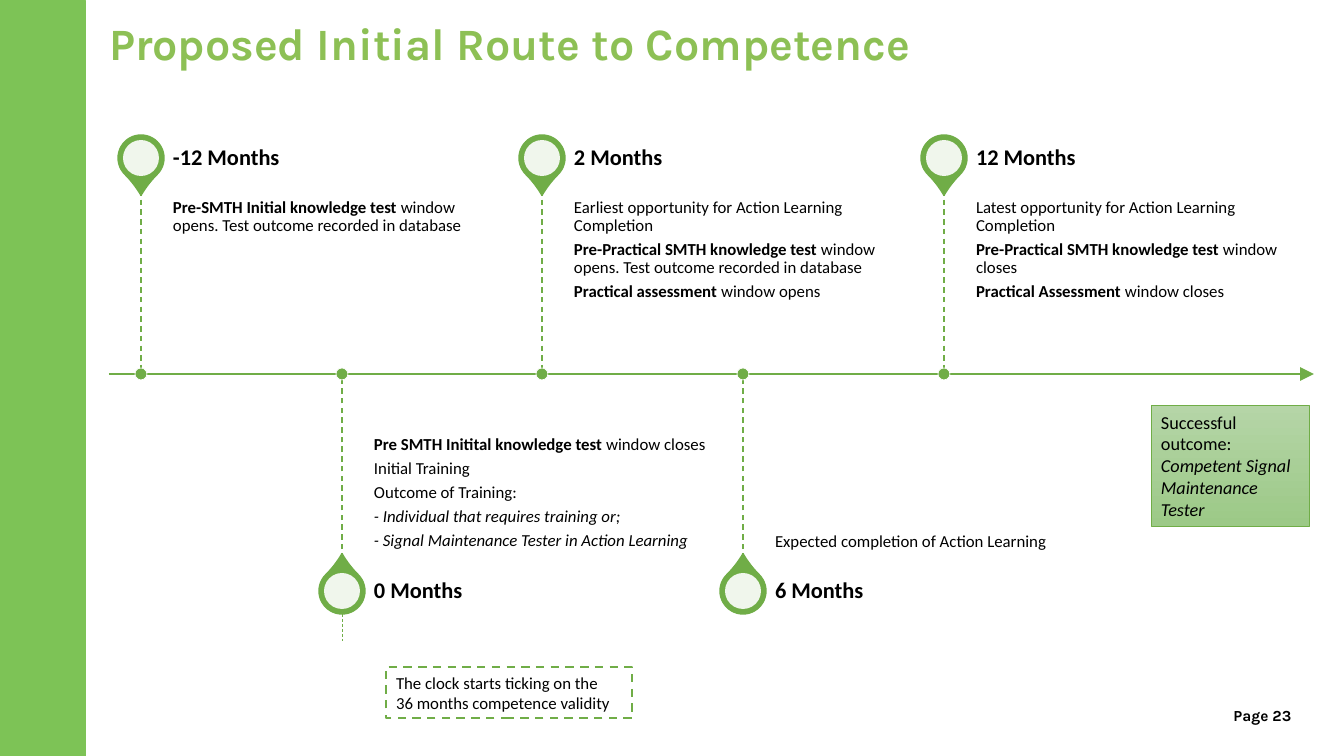
from lxml.etree import SubElement
from pptx import Presentation
from pptx.dml.color import RGBColor
from pptx.enum.dml import MSO_LINE
from pptx.enum.shapes import MSO_CONNECTOR, MSO_SHAPE
from pptx.enum.text import MSO_ANCHOR, PP_ALIGN
from pptx.oxml.ns import qn
from pptx.util import Emu, Pt

WIDTH, HEIGHT = 1344, 756
EMU_PER_PX = 12192000 / WIDTH
GREEN = RGBColor(0x70, 0xAD, 0x47)
BAR_GREEN = RGBColor(0x7D, 0xC3, 0x56)
TITLE_GREEN = RGBColor(0x8D, 0xC0, 0x55)
OUTCOME_TOP = RGBColor(0xB5, 0xD5, 0xA7)
OUTCOME_BOTTOM = RGBColor(0x9C, 0xC9, 0x87)
BLACK = RGBColor(0, 0, 0)
WHITE = RGBColor(255, 255, 255)

AXIS_Y = 374
FIRST_X, STEP = 141, 200.75
PIN, PIN_HOLE, DOT = 46, 36, 12
TEXT_WIDTH, BODY_HEIGHT, HEADING_HEIGHT = 335, 184, 64
PLAIN, BOLD, ITALIC = "plain", "bold", "italic"

# Milestones alternate above and below the axis; each body paragraph is a list of (text, style).
MILESTONES = [
    ("-12 Months", [
        [("Pre-SMTH Initial knowledge test ", BOLD),
         ("window opens. Test outcome recorded in database", PLAIN)]]),
    ("0 Months", [
        [("Pre SMTH Initital knowledge test ", BOLD), ("window closes", PLAIN)],
        [("Initial Training", PLAIN)],
        [("Outcome of Training:", PLAIN)],
        [("- Individual that requires training or;", ITALIC)],
        [("- Signal Maintenance Tester in Action Learning", ITALIC)]]),
    ("2 Months", [
        [("Earliest opportunity for Action Learning Completion", PLAIN)],
        [("Pre-Practical SMTH knowledge test ", BOLD),
         ("window opens. Test outcome recorded in database", PLAIN)],
        [("Practical assessment ", BOLD), ("window opens", PLAIN)]]),
    ("6 Months", [
        [("Expected completion of Action Learning", PLAIN)]]),
    ("12 Months", [
        [("Latest opportunity for Action Learning Completion", PLAIN)],
        [("Pre-Practical SMTH knowledge test ", BOLD), ("window closes", PLAIN)],
        [("Practical Assessment ", BOLD), ("window closes", PLAIN)]]),
]


def px(*lengths):
    return [Emu(round(length * EMU_PER_PX)) for length in lengths]


def write(shape, paragraphs, size, margins=(10, 5, 10, 5), anchor=MSO_ANCHOR.MIDDLE,
          font="Calibri", color=BLACK, align=PP_ALIGN.LEFT, line_spacing=1.0, gap=0):
    """Fill a shape with paragraphs of (text, style) runs; margins are left, top, right, bottom."""
    frame = shape.text_frame
    frame.word_wrap = True
    frame.vertical_anchor = anchor
    (frame.margin_left, frame.margin_top,
     frame.margin_right, frame.margin_bottom) = px(*margins)
    for number, runs in enumerate(paragraphs):
        paragraph = frame.paragraphs[0] if number == 0 else frame.add_paragraph()
        paragraph.alignment = align
        paragraph.line_spacing = line_spacing
        paragraph.space_before = Pt(0)
        paragraph.space_after = Pt(gap)
        for text, style in runs:
            run = paragraph.add_run()
            run.text = text
            run.font.name = font
            run.font.size = Pt(size)
            run.font.color.rgb = color
            run.font.bold = style == BOLD
            run.font.italic = style == ITALIC


presentation = Presentation()
presentation.slide_width, presentation.slide_height = px(WIDTH, HEIGHT)
slide = presentation.slides.add_slide(presentation.slide_layouts[5])
shapes = slide.shapes

side_bar = shapes.add_shape(MSO_SHAPE.RECTANGLE, *px(-1, 0, 86, HEIGHT))
side_bar.fill.solid()
side_bar.fill.fore_color.rgb = BAR_GREEN
side_bar.line.color.rgb = BAR_GREEN
side_bar.line.width = Pt(0.5)

page_number = shapes.add_textbox(*px(1181, 706, 163, 19))
write(page_number, [[("Page 23", BOLD)]], 11, margins=(0, 0, 0, 0),
      anchor=MSO_ANCHOR.TOP, font="Karla", align=PP_ALIGN.CENTER)

title = shapes.title
title.left, title.top, title.width, title.height = px(109, 0, 1190, 92)
write(title, [[("Proposed Initial Route to Competence", BOLD)]], 32,
      margins=(0, 5, 0, 5), font="Karla", color=TITLE_GREEN, line_spacing=0.9)

axis = shapes.add_connector(MSO_CONNECTOR.STRAIGHT, *px(109, AXIS_Y, 1314, AXIS_Y))
axis.line.color.rgb = GREEN
axis.line.width = Pt(1.5)
SubElement(axis.line._get_or_add_ln(), qn("a:tailEnd"), type="triangle", w="lg", len="lg")

for index, (heading, body) in enumerate(MILESTONES):
    x = round(FIRST_X + index * STEP)
    text_left = x + 32
    if index % 2 == 0:
        pin_y, rotation, stem_end = 158, 135, 190
        heading_top, body_top = 126, 191
        body_margins, body_anchor = (0, 8, 8, 12), MSO_ANCHOR.TOP
    else:
        pin_y, rotation, stem_end = 591, 315, 559
        heading_top, body_top = 559, AXIS_Y
        body_margins, body_anchor = (0, 12, 0, 8), MSO_ANCHOR.BOTTOM

    pin = shapes.add_shape(MSO_SHAPE.TEAR, *px(x - PIN / 2, pin_y - PIN / 2, PIN, PIN))
    pin.adjustments[0] = 1.15
    pin.rotation = rotation
    pin.fill.solid()
    pin.fill.fore_color.rgb = GREEN
    pin.line.color.rgb = GREEN
    pin.line.width = Pt(1)

    hole = shapes.add_shape(
        MSO_SHAPE.OVAL, *px(x - PIN_HOLE / 2, pin_y - PIN_HOLE / 2, PIN_HOLE, PIN_HOLE))
    hole.fill.solid()
    hole.fill.fore_color.rgb = WHITE
    hole_color = hole.element.spPr.find(qn("a:solidFill"))[0]
    SubElement(hole_color, qn("a:alpha"), val="90000")
    hole.line.fill.background()

    body_box = shapes.add_textbox(*px(text_left, body_top, TEXT_WIDTH, BODY_HEIGHT))
    write(body_box, body, 12, body_margins, body_anchor, line_spacing=0.9, gap=4.2)
    heading_box = shapes.add_textbox(*px(text_left, heading_top, TEXT_WIDTH, HEADING_HEIGHT))
    write(heading_box, [[(heading, BOLD)]], 16, (0, 0, 11, 0), line_spacing=0.9)

    stem = shapes.add_connector(MSO_CONNECTOR.STRAIGHT, *px(x, stem_end, x, AXIS_Y))
    stem.line.color.rgb = GREEN
    stem.line.width = Pt(1)
    stem.line.dash_style = MSO_LINE.DASH

    dot = shapes.add_shape(MSO_SHAPE.OVAL, *px(x - DOT / 2, AXIS_Y - DOT / 2, DOT, DOT))
    dot.fill.solid()
    dot.fill.fore_color.rgb = GREEN
    dot.line.color.rgb = WHITE
    dot.line.width = Pt(0.5)

outcome = shapes.add_shape(MSO_SHAPE.RECTANGLE, *px(1151, 405, 158, 121))
outcome.fill.gradient()
outcome.fill.gradient_angle = 270
for stop, color in zip(outcome.fill.gradient_stops, (OUTCOME_TOP, OUTCOME_BOTTOM)):
    stop.color.rgb = color
outcome.line.color.rgb = GREEN
outcome.line.width = Pt(0.5)
write(outcome, [[("Successful outcome: ", PLAIN),
                 ("Competent Signal Maintenance Tester", ITALIC)]], 13)

clock_note = shapes.add_shape(MSO_SHAPE.RECTANGLE, *px(386, 667, 246, 51))
clock_note.fill.background()
clock_note.line.color.rgb = GREEN
clock_note.line.width = Pt(1.5)
clock_note.line.dash_style = MSO_LINE.DASH
write(clock_note, [[("The clock starts ticking on the", PLAIN)],
                   [("36 months competence validity", PLAIN)]], 12)

clock_x = round(FIRST_X + STEP)
clock_line = shapes.add_connector(MSO_CONNECTOR.STRAIGHT, *px(clock_x, 609, clock_x, 641))
clock_line.line.color.rgb = GREEN
clock_line.line.width = Pt(0.5)
clock_line.line.dash_style = MSO_LINE.DASH

for shape in shapes:
    if shape.element.tag == qn("p:cxnSp"):
        SubElement(shape.element.spPr, qn("a:effectLst"))
    else:
        shape.shadow.inherit = False

presentation.save("out.pptx")
